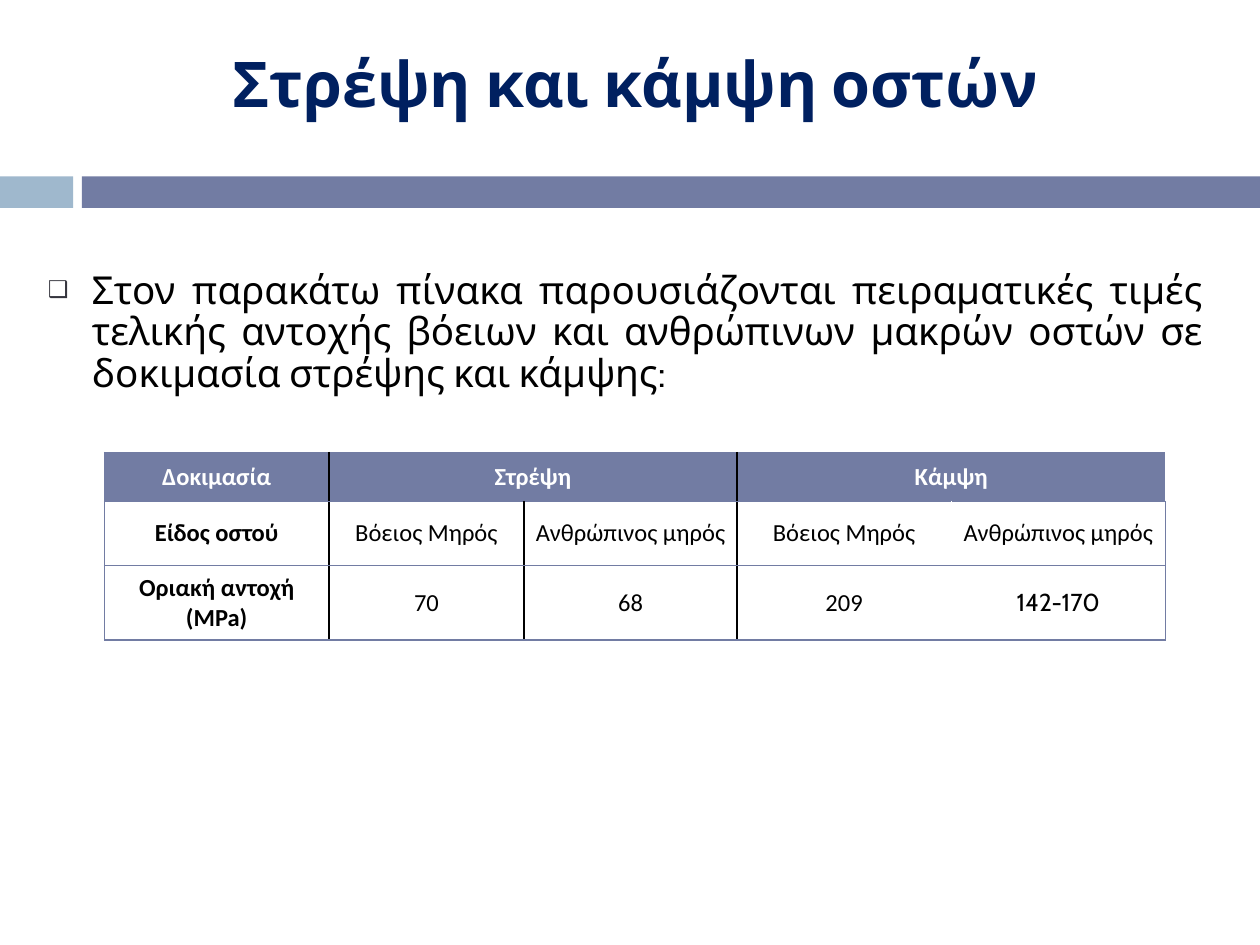
from lxml import etree
from pptx import Presentation
from pptx import util as u
from pptx.dml import color
from pptx.enum import shapes, text
from pptx.oxml import ns

INDIGO, SKY, NAVY, BLACK, WHITE = "727CA3", "9FB8CD", "002060", "000000", "FFFFFF"
ROWS = [
    ["Δοκιμασία", "Στρέψη", "", "Κάμψη", ""],
    ["Είδος οστού"] + ["Βόειος Μηρός", "Ανθρώπινος μηρός"] * 2,
    ["Οριακή αντοχή (ΜPa)", "70", "68", "209", "142-170"],
]
COLUMN_WIDTHS = [1.78, 1.55, 1.69, 1.7, 1.7]
ROW_HEIGHTS = [0.39, 0.51, 0.59]


def rgb(value):
    """Turn a hex string into a colour."""
    return color.RGBColor.from_string(value)


def place(part, box):
    """Move a part to its box, given in inches."""
    part.left, part.top, part.width, part.height = map(u.Inches, box)


def style(paragraph, size, font, ink, bold, align):
    """Format a paragraph and its runs."""
    paragraph.alignment = align
    for run in paragraph.runs:
        run.font.size = u.Pt(size)
        run.font.name = font
        run.font.bold = bold
        run.font.color.rgb = rgb(ink)


def add_xml(parent, tag, **attributes):
    """Append a drawing element with attributes."""
    return etree.SubElement(parent, ns.qn(tag), **attributes)


def add_band(slide, box, fill):
    """Draw one plain block of the divider."""
    band = slide.shapes.add_shape(shapes.MSO_SHAPE.RECTANGLE, *map(u.Inches, box))
    band.shadow.inherit = False
    band.fill.solid()
    band.fill.fore_color.rgb = rgb(fill)
    band.line.fill.background()


def fill_title(title, box):
    """Write the heading in the title placeholder."""
    place(title, box)
    frame = title.text_frame
    frame.text = "Στρέψη και κάμψη οστών"
    frame.vertical_anchor = text.MSO_ANCHOR.TOP
    frame.auto_size = text.MSO_AUTO_SIZE.NONE
    heading = frame.paragraphs[0]
    heading.space_before = u.Pt(7)
    style(heading, 36, "Cabin", NAVY, True, text.PP_ALIGN.CENTER)


def fill_body(body, box):
    """Write the bulleted introduction in the body placeholder."""
    place(body, box)
    frame = body.text_frame
    frame.text = ("Στον παρακάτω πίνακα παρουσιάζονται πειραματικές τιμές τελικής αντοχής "
                  "βόειων και ανθρώπινων μακρών οστών σε δοκιμασία στρέψης και κάμψης:")
    frame.auto_size = text.MSO_AUTO_SIZE.NONE
    intro = frame.paragraphs[0]
    style(intro, 22, "Cabin", BLACK, False, text.PP_ALIGN.JUSTIFY)
    intro.line_spacing = 0.9
    intro.space_before = u.Pt(0)
    intro.space_after = u.Pt(24)
    properties = intro._p.get_or_add_pPr()
    properties.set("marL", str(u.Inches(0.35)))
    properties.set("indent", str(u.Inches(-0.35)))
    add_xml(add_xml(properties, "a:buClr"), "a:srgbClr", val="35353E")
    add_xml(properties, "a:buSzPct", val="60000")
    add_xml(properties, "a:buChar", char="❑")


def add_border(cell, side, ink):
    """Draw one side of a cell: thick if black, otherwise thin."""
    width = u.Pt(1.5 if ink == BLACK else 0.79)
    border = add_xml(cell._tc.get_or_add_tcPr(), f"a:ln{side}", w=str(width))
    add_xml(add_xml(border, "a:solidFill"), "a:srgbClr", val=ink)


def format_cell(cell, row, column):
    """Set the text, borders and fill of a table cell."""
    header = row == 0
    cell.text = ROWS[row][column]
    cell.vertical_anchor = text.MSO_ANCHOR.MIDDLE
    cell.margin_left = cell.margin_right = u.Inches(0.07)
    cell.margin_top = cell.margin_bottom = 0
    font = "Cabin" if cell.text == "142-170" else "Calibri"
    style(cell.text_frame.paragraphs[0], 14, font, WHITE if header else BLACK,
          header or column == 0, text.PP_ALIGN.CENTER)
    edges = {0: INDIGO, 1: BLACK, 3 if header else 2: BLACK, 5: INDIGO}
    for side, edge in (("L", column), ("R", column + 1)):
        if edge in edges:
            add_border(cell, side, edges[edge])
    for side in "TB":
        add_border(cell, side, INDIGO)
    cell.fill.solid()
    cell.fill.fore_color.rgb = rgb(INDIGO if header else WHITE)


def add_strength_table(slide, box):
    """Build the table of ultimate bone strengths."""
    table = slide.shapes.add_table(len(ROWS), len(COLUMN_WIDTHS), *map(u.Inches, box)).table
    table.first_row = table.horz_banding = False
    for column, width in zip(table.columns, COLUMN_WIDTHS):
        column.width = u.Inches(width)
    for row, height in zip(table.rows, ROW_HEIGHTS):
        row.height = u.Inches(height)
    for row in range(len(ROWS)):
        for column in range(len(COLUMN_WIDTHS)):
            format_cell(table.cell(row, column), row, column)
    for column in (1, 3):
        table.cell(0, column).merge(table.cell(0, column + 1))


def main():
    """Assemble and save the slide."""
    deck = Presentation()
    deck.slide_width, deck.slide_height = u.Inches(10), u.Inches(7.5)
    slide = deck.slides.add_slide(deck.slide_layouts[1])
    add_band(slide, (0, 1.4, 0.58, 0.25), SKY)
    add_band(slide, (0.65, 1.4, 9.35, 0.25), INDIGO)
    fill_body(slide.placeholders[1], (0.28, 2.1, 9.37, 5.43))
    fill_title(slide.shapes.title, (0.79, 0.3, 8.5, 1.17))
    add_strength_table(slide, (0.83, 3.59, 8.42, 1.49))
    deck.save("out.pptx")


if __name__ == "__main__":
    main()
